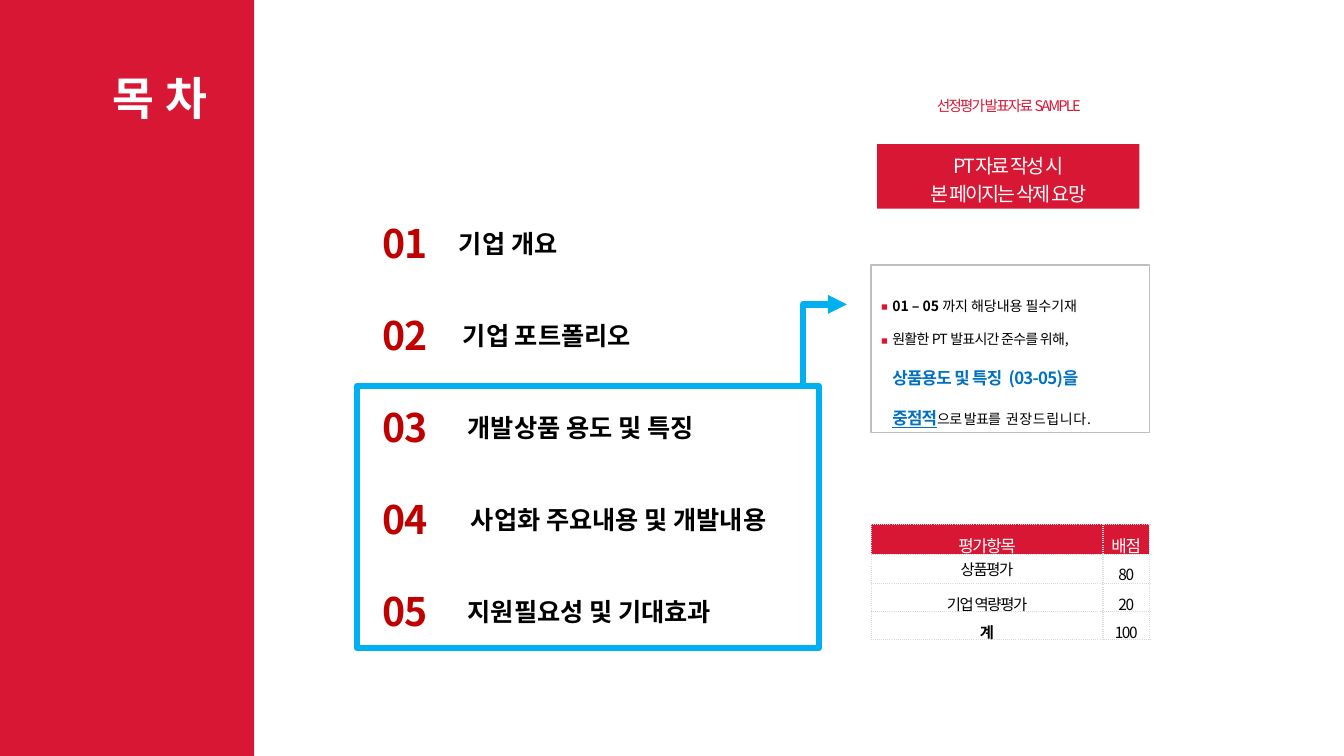
from dataclasses import dataclass

from lxml import etree
from pptx import Presentation
from pptx.dml.color import RGBColor
from pptx.enum.dml import MSO_LINE
from pptx.enum.shapes import MSO_CONNECTOR, MSO_SHAPE
from pptx.enum.text import MSO_ANCHOR, MSO_AUTO_SIZE, PP_ALIGN
from pptx.oxml.ns import qn
from pptx.util import Inches, Pt

LEFT, CENTER = PP_ALIGN.LEFT, PP_ALIGN.CENTER
TOP, MIDDLE = MSO_ANCHOR.TOP, MSO_ANCHOR.MIDDLE
GROW, FIXED = MSO_AUTO_SIZE.SHAPE_TO_FIT_TEXT, MSO_AUTO_SIZE.NONE
RECT, ELBOW = MSO_SHAPE.RECTANGLE, MSO_CONNECTOR.ELBOW
DOTS = MSO_LINE.ROUND_DOT


@dataclass(frozen=True)
class Theme:
    font: str = "Noto Sans CJK KR"
    red: str = "D71733"
    deep: str = "C00000"
    sky: str = "00B0F0"
    blue: str = "0070C0"
    black: str = "000000"
    white: str = "FFFFFF"
    gray: str = "BFBFBF"
    pale: str = "D9D9D9"
    title: float = 32.5
    number: float = 28
    topic: float = 18
    notice: float = 14
    strong: float = 12
    cell: float = 11
    label: float = 10.5
    note: float = 10


T = Theme()

# topic, left, width
TOPICS = [
    ("기업 개요", 4.43, 1.22),
    ("기업 포트폴리오", 4.46, 1.93),
    ("개발상품 용도 및 특징", 4.49, 2.54),
    ("사업화 주요내용 및 개발내용", 4.51, 3.25),
    ("지원필요성 및 기대효과", 4.49, 2.71),
]
SCORES = [("평가항목", "배점"), ("상품평가", "80"),
          ("기업 역량평가", "20"), ("계", "100")]

BASE = dict(size=T.note, color=T.black, bold=False, spc=0)
KEY = dict(size=T.strong, color=T.blue, bold=True, spc=-0.5)
# bulleted or not, then runs of text and format
NOTES = [
    (True, [("01 – 05 ", dict(bold=True)), ("까지 해당내용 필수기재", {})]),
    (True, [("원활한 PT 발표시간 준수를 위해,", dict(spc=-0.5))]),
    (False, [("상품용도 및 특징  (03-05)을", KEY)]),
    (False, [("중점적", dict(KEY, underline=True)),
             ("으로 발표를  ", dict(spc=-0.5)),
             ("권장드립니다.", dict(spc=0.5))]),
]


def box(*at):
    return [Inches(v) for v in at]


def apply(target, **values):
    for name, value in values.items():
        setattr(target, name, value)


def write(par, text, **style):
    look = {**BASE, **style}
    run = par.add_run()
    run.text = text
    font = run.font
    font.color.rgb = RGBColor.from_string(look.pop("color"))
    props = run._r.get_or_add_rPr()
    props.set("spc", str(round(look.pop("spc") * 100)))
    apply(font, name=T.font, size=Pt(look.pop("size")), **look)
    etree.SubElement(props, qn("a:ea"), typeface=T.font)


def fill_text(frame, lines, align=CENTER, spacing=1.0, **style):
    for i, line in enumerate(lines):
        par = frame.add_paragraph() if i else frame.paragraphs[0]
        apply(par, alignment=align, line_spacing=spacing)
        write(par, line, **style)


def label(slide, at, text, wrap=True, **style):
    frame = slide.shapes.add_textbox(*box(*at)).text_frame
    apply(frame, word_wrap=wrap, auto_size=GROW)
    fill_text(frame, [text], **style)


def stroke(line, color, width):
    line.color.rgb = RGBColor.from_string(color)
    line.width = Pt(width)


def panel(slide, at, fill=None, line=None, width=1):
    shape = slide.shapes.add_shape(RECT, *box(*at))
    shape.shadow.inherit = False
    if fill:
        shape.fill.solid()
        shape.fill.fore_color.rgb = RGBColor.from_string(fill)
    else:
        shape.fill.background()
    if line:
        stroke(shape.line, line, width)
    else:
        shape.line.fill.background()
    return shape


def arrow(slide, *ends):
    link = slide.shapes.add_connector(ELBOW, *box(*ends))
    stroke(link.line, T.sky, 4.5)
    etree.SubElement(link.line._get_or_add_ln(), qn("a:tailEnd"), type="triangle")
    etree.SubElement(link._element.spPr, qn("a:effectLst"))


def place(holder, *at):
    names = ("left", "top", "width", "height")
    apply(holder, **dict(zip(names, box(*at))))


def heading(slide):
    title = slide.shapes.title
    place(title, 1, 0.68, 2.3, 0.46)
    frame = title.text_frame
    apply(frame, word_wrap=False, auto_size=FIXED, vertical_anchor=MIDDLE,
          margin_left=Inches(0.12), margin_right=Inches(0.12),
          margin_top=Inches(0.06), margin_bottom=Inches(0.06))
    fill_text(frame, ["목 차"], LEFT, 1.2, size=T.title, color=T.white, bold=True)


def mark(par, dotted):
    """Set the hanging indent and the square bullet of a note."""
    props = par._p.get_or_add_pPr()
    props.set("marL", str(Inches(0.11)))
    props.set("indent", str(Inches(-0.11) if dotted else 0))
    if not dotted:
        etree.SubElement(props, qn("a:buNone"))
        return
    color = etree.SubElement(props, qn("a:buClr"))
    etree.SubElement(color, qn("a:srgbClr"), val=T.red)
    etree.SubElement(props, qn("a:buFont"), typeface=T.font)
    etree.SubElement(props, qn("a:buChar"), char="◾")


def notes(slide):
    body = slide.placeholders[1]
    place(body, 8.64, 2.73, 2.67, 1.51)
    frame = body.text_frame
    apply(frame, auto_size=FIXED, vertical_anchor=TOP)
    for i, (dotted, runs) in enumerate(NOTES):
        par = frame.add_paragraph() if i else frame.paragraphs[0]
        apply(par, alignment=LEFT, line_spacing=2.0, space_before=Pt(0))
        mark(par, dotted)
        for text, style in runs:
            write(par, text, **style)


def edge(cell):
    props = cell._tc.get_or_add_tcPr()
    for i, side in enumerate(("lnL", "lnR", "lnT", "lnB")):
        line = etree.Element(qn(f"a:{side}"), w=str(Pt(1)))
        paint = etree.SubElement(line, qn("a:solidFill"))
        etree.SubElement(paint, qn("a:srgbClr"), val=T.pale)
        etree.SubElement(line, qn("a:prstDash"), val="sysDot")
        props.insert(i, line)


def scores(slide):
    frame = slide.shapes.add_table(len(SCORES), 2, *box(8.64, 5.2, 2.76, 0.9))
    table = frame.table
    for col, width in zip(table.columns, (2.3, 0.46)):
        col.width = Inches(width)
    for r, (row, height) in enumerate(zip(SCORES, (0.21, 0.29, 0.2, 0.2))):
        table.rows[r].height = Inches(height)
        head = r == 0
        for c, text in enumerate(row):
            cell = table.cell(r, c)
            cell.fill.solid()
            cell.fill.fore_color.rgb = RGBColor.from_string(T.red if head else T.white)
            gap = Inches(0.02)
            apply(cell, vertical_anchor=MIDDLE, margin_left=gap,
                  margin_right=gap, margin_top=gap, margin_bottom=gap)
            fill_text(cell.text_frame, [text],
                      spacing=1.0 if text == "상품평가" else 1.3,
                      size=T.strong if head else T.cell, spc=-1,
                      color=T.white if head else T.black, bold=text == "계")
            edge(cell)


def main():
    deck = Presentation()
    apply(deck, slide_width=Inches(13.33), slide_height=Inches(7.5))
    slide = deck.slides.add_slide(deck.slide_layouts[1])

    band = panel(slide, (0, 0, 2.52, 7.5), fill=T.red)
    slide.shapes.title.element.addprevious(band.element)
    heading(slide)
    panel(slide, (8.64, 2.63, 2.76, 1.66), line=T.gray)
    notes(slide)

    for i, (topic, left, width) in enumerate(TOPICS):
        top = 2.13 + 0.9125 * i
        label(slide, (3.62, top, 0.79, 0.57), f"{i + 1:02}",
              size=T.number, color=T.deep, bold=True, spc=-1)
        label(slide, (left, top + 0.09, width, 0.4), topic, wrap=False,
              size=T.topic, bold=True)

    panel(slide, (3.54, 3.83, 4.58, 2.6), line=T.sky, width=4.5)
    scores(slide)

    notice = panel(slide, (8.7, 1.43, 2.6, 0.64), fill=T.red).text_frame
    apply(notice, word_wrap=True, vertical_anchor=TOP)
    fill_text(notice, ["PT자료 작성 시", "본 페이지는 삭제 요망"], spacing=1.2,
              size=T.notice, color=T.white, spc=-1.3)
    label(slide, (8.88, 0.91, 2.25, 0.28), "선정평가 발표자료 SAMPLE",
          size=T.label, color=T.red, spc=-1.3)
    arrow(slide, 7.53, 3.83, 8.4, 3.02)
    deck.save("out.pptx")


if __name__ == "__main__":
    main()
